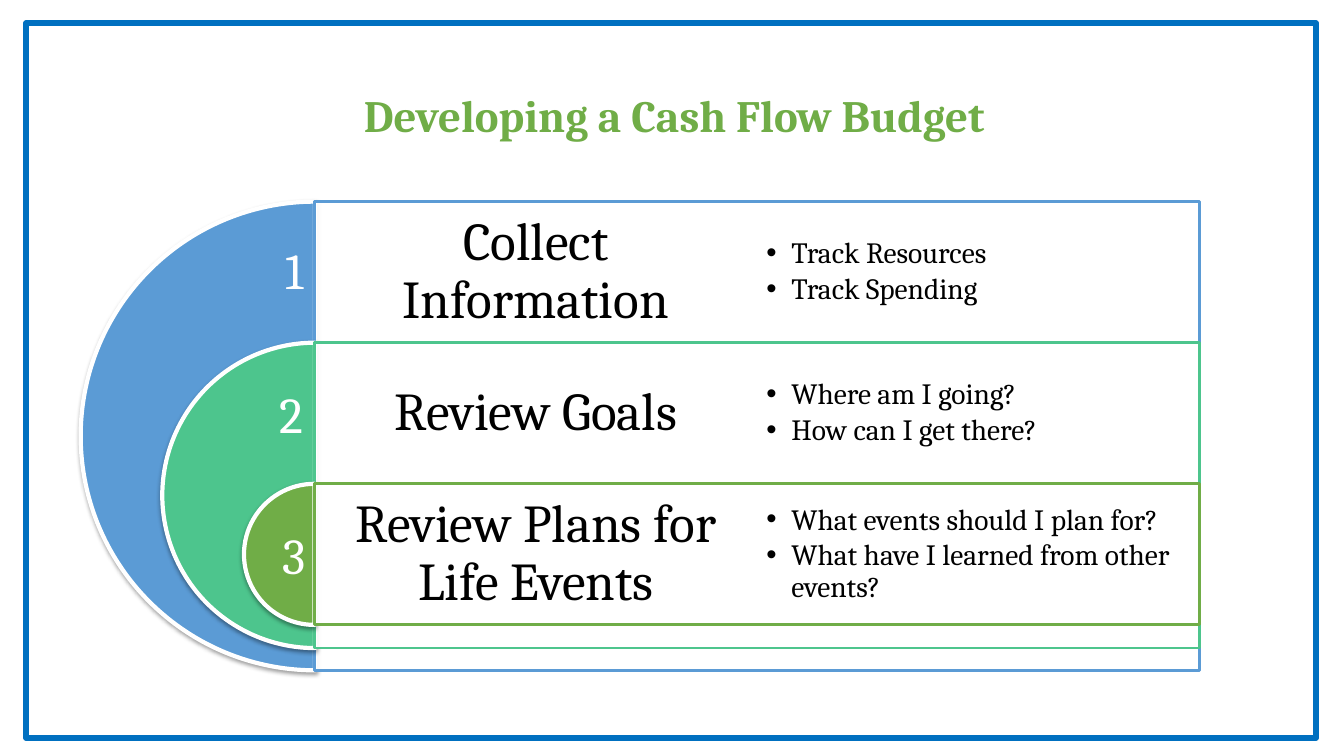
from lxml.etree import SubElement
from pptx import Presentation
from pptx.dml.color import RGBColor
from pptx.enum.shapes import MSO_SHAPE
from pptx.enum.text import MSO_ANCHOR, MSO_AUTO_SIZE, PP_ALIGN
from pptx.oxml.ns import qn
from pptx.util import Pt

PX = 9144  # 100 px to the inch
STAGES = [
    ("Collect Information", "5B9BD5", 465, (273, 232),
     ["Track Resources", "Track Spending"]),
    ("Review Goals", "4DC58D", 303, (267, 375),
     ["Where am I going?", "How can I get there?"]),
    ("Review Plans for Life Events", "70AD47", 140, (270, 515),
     ["What events should I plan for?", "What have I learned from other events?"]),
]
CENTER_X, TOP, ROW, COLUMN = 312, 200, 140, 439


def write(box, lines, size, color, margin=None, bold=False, bullet=False, **paragraph_format):
    """Fill a text box or placeholder with evenly formatted paragraphs."""
    frame = box.text_frame
    frame.word_wrap = True
    if margin is not None:
        frame.vertical_anchor = MSO_ANCHOR.MIDDLE
        for side in ("left", "top", "right", "bottom"):
            setattr(frame, f"margin_{side}", margin * PX)
    for index, line in enumerate(lines):
        para = frame.add_paragraph() if index else frame.paragraphs[0]
        span = para.add_run()
        span.text = line
        font_format = {"name": "Cambria", "size": Pt(size), "bold": bold}
        for name, value in font_format.items():
            setattr(span.font, name, value)
        span.font.color.rgb = RGBColor.from_string(color)
        for name, value in paragraph_format.items():
            setattr(para, name, value)
        if bullet:
            properties = para._p.get_or_add_pPr()
            properties.set("marL", str(25 * PX))
            properties.set("indent", str(-25 * PX))
            SubElement(properties, qn("a:buFont"), typeface="Arial")
            SubElement(properties, qn("a:buChar"), char="•")


def add_outlined(kind, bounds, fill, line, width):
    """Add a preset shape with a plain fill and outline."""
    shape = page.shapes.add_shape(kind, *(value * PX for value in bounds))
    shape.shadow.inherit = False
    if fill:
        shape.fill.solid()
        shape.fill.fore_color.rgb = RGBColor.from_string(fill)
    else:
        shape.fill.background()
    shape.line.color.rgb = RGBColor.from_string(line)
    shape.line.width = Pt(width)
    return shape


deck = Presentation()
deck.slide_width, deck.slide_height = 1333 * PX, 750 * PX
page = deck.slides.add_slide(deck.slide_layouts[5])

# Title and page frame
title = page.shapes.title
title_place = {"left": 79, "top": 45, "width": 1180, "height": 137}
for name, value in title_place.items():
    setattr(title, name, value * PX)
title.fill.solid()
title.fill.fore_color.rgb = RGBColor.from_string("FFFFFF")
write(title, ["Developing a Cash Flow Budget"], 32, "70AD47", margin=5, bold=True,
      alignment=PP_ALIGN.CENTER)
add_outlined(MSO_SHAPE.RECTANGLE, (26, 23, 1279, 709), None, "0070C0", 4.5)

# Nested half discs, each with its panel and heading
for row, (heading, color, size, _, _) in enumerate(STAGES):
    top = TOP + row * ROW
    disc = add_outlined(MSO_SHAPE.PIE, (CENTER_X - size // 2, top, size, size),
                        color, "FFFFFF", 3)
    disc.adjustments[0], disc.adjustments[1] = 54, 162
    effects = disc._element.spPr.find(qn("a:effectLst"))
    shadow = SubElement(effects, qn("a:outerShdw"), blurRad=str(Pt(3.1)),
                        dist=str(Pt(1.6)), dir="5400000", rotWithShape="0")
    shadow_color = SubElement(shadow, qn("a:srgbClr"), val="000000")
    SubElement(shadow_color, qn("a:alpha"), val="38000")

    panel = add_outlined(MSO_SHAPE.RECTANGLE, (CENTER_X, top, 2 * COLUMN, size),
                         "FFFFFF", color, 2)
    panel_color = panel._element.spPr.find(qn("a:solidFill")).find(qn("a:srgbClr"))
    SubElement(panel_color, qn("a:alpha"), val="90000")

    label = page.shapes.add_textbox(CENTER_X * PX, top * PX, COLUMN * PX, ROW * PX)
    write(label, [heading], 38, "000000", margin=16,
          alignment=PP_ALIGN.CENTER, line_spacing=0.9)

# Bulleted details in the right column
for row, (_, _, _, _, details) in enumerate(STAGES):
    box = page.shapes.add_textbox((CENTER_X + COLUMN) * PX, (TOP + row * ROW) * PX,
                                  COLUMN * PX, ROW * PX)
    write(box, details, 21, "000000", margin=9, bullet=True,
          level=1, alignment=PP_ALIGN.LEFT, line_spacing=0.9, space_after=Pt(3))

# Stage numbers on the discs
for number, (_, _, _, (left, top), _) in enumerate(STAGES, start=1):
    box = page.shapes.add_textbox(left * PX, top * PX, 138 * PX, 71 * PX)
    write(box, [str(number)], 36, "FFFFFF")
    box.text_frame.auto_size = MSO_AUTO_SIZE.SHAPE_TO_FIT_TEXT

deck.save("out.pptx")
